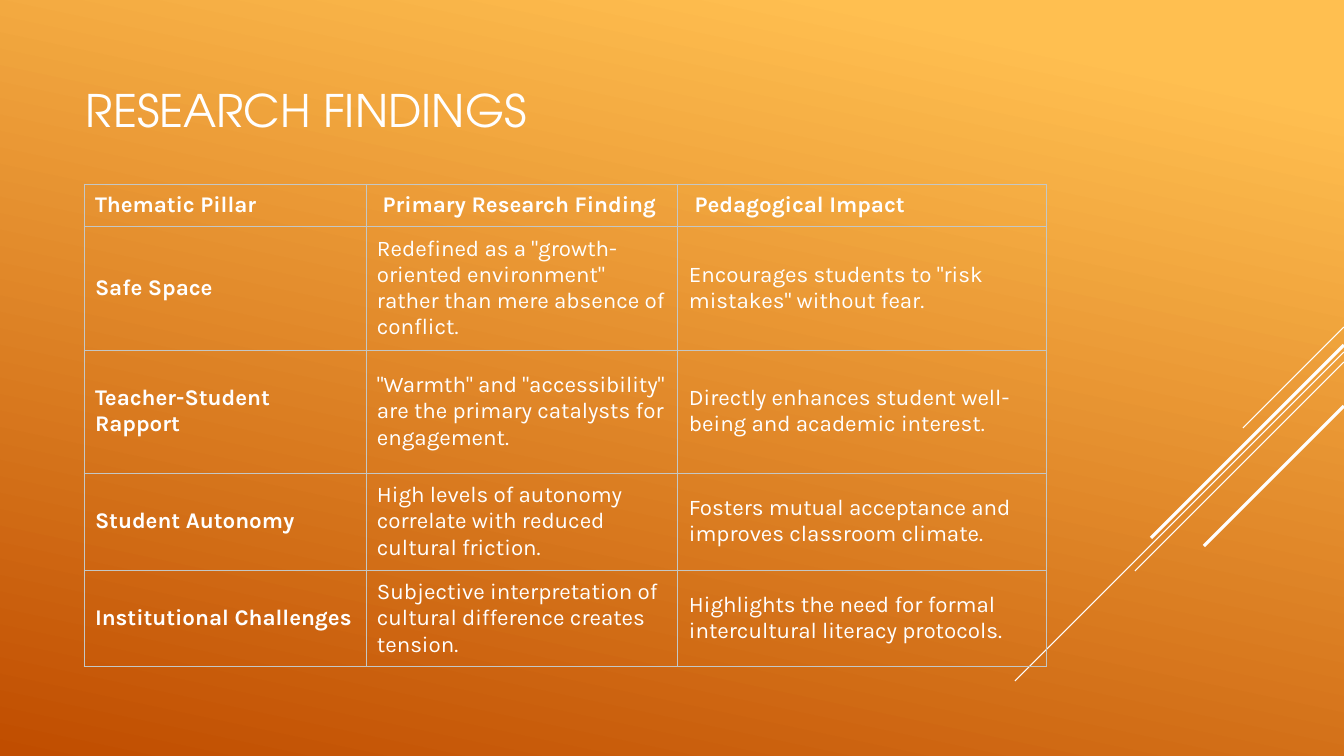
from dataclasses import dataclass

from lxml import etree
from pptx import Presentation
from pptx import util as u
from pptx.dml.color import RGBColor
from pptx.enum import shapes, text
from pptx.oxml import ns


@dataclass(frozen=True)
class Theme:
    ink: str = "FFFFFF"
    border: str = "C4C7C5"
    glow: str = "FFBF50"
    ember: str = "C04D00"
    heading_font: str = "TeX Gyre Adventor"
    body_font: str = "Karla"
    heading_size: int = 32
    body_size: int = 16
    hairline: float = 0.75
    bold_line: float = 2.25


THEME = Theme()
PX_PER_INCH = 100.8
SLIDE_WIDTH, SLIDE_HEIGHT = 1344, 756

STREAKS = [
    (327, 101, THEME.hairline),
    (352, 329, THEME.hairline),
    (362, 209, THEME.hairline),
    (345, 193, THEME.bold_line),
    (406, 140, THEME.bold_line),
]
COLUMN_WIDTHS = [282, 312, 369]
ROW_HEIGHTS = [42, 124, 123, 97, 97]
FINDINGS = [
    ("Thematic Pillar", " Primary Research Finding", " Pedagogical Impact"),
    ("Safe Space",
     'Redefined as a "growth-oriented environment" rather than mere absence of conflict.',
     'Encourages students to "risk mistakes" without fear.'),
    ("Teacher-Student Rapport",
     '"Warmth" and "accessibility" are the primary catalysts for engagement.',
     "Directly enhances student well-being and academic interest."),
    ("Student Autonomy",
     "High levels of autonomy correlate with reduced cultural friction.",
     "Fosters mutual acceptance and improves classroom climate."),
    ("Institutional Challenges",
     "Subjective interpretation of cultural difference creates tension.",
     "Highlights the need for formal intercultural literacy protocols."),
]


def px(length):
    return u.Inches(length / PX_PER_INCH)


def apply(target, values):
    for name, value in values.items():
        setattr(target, name, value)


def write(paragraph, words, font, size, bold=False):
    run = paragraph.add_run()
    run.text = words
    apply(run.font, {"name": font, "size": u.Pt(size), "bold": bold})
    run.font.color.rgb = RGBColor.from_string(THEME.ink)


def paint_background(slide):
    fill = slide.background.fill
    fill.gradient()
    fill.gradient_angle = 258
    for stop, color, position in zip(
        fill.gradient_stops, (THEME.glow, THEME.ember), (0.1, 1)
    ):
        stop.color.rgb = RGBColor.from_string(color)
        stop.position = position


def add_streak(slide, top, reach, weight):
    streak = slide.shapes.add_connector(
        shapes.MSO_CONNECTOR.STRAIGHT,
        px(SLIDE_WIDTH), px(top), px(SLIDE_WIDTH - reach), px(top + reach),
    )
    streak.line.color.rgb = RGBColor.from_string(THEME.ink)
    streak.line.width = u.Pt(weight)
    etree.SubElement(streak._element.spPr, ns.qn("a:effectLst"))


def add_heading(slide, words):
    heading = slide.shapes.add_textbox(px(76), px(20), px(1138), px(186))
    frame = heading.text_frame
    apply(frame, {"word_wrap": True, "vertical_anchor": text.MSO_ANCHOR.MIDDLE})
    frame.paragraphs[0].line_spacing = 0.9
    write(frame.paragraphs[0], words, THEME.heading_font, THEME.heading_size)


def outline(cell):
    properties = cell._tc.get_or_add_tcPr()
    for index, side in enumerate(("lnL", "lnR", "lnT", "lnB")):
        edge = etree.Element(ns.qn(f"a:{side}"), w=str(u.Pt(THEME.hairline)))
        solid = etree.SubElement(edge, ns.qn("a:solidFill"))
        etree.SubElement(solid, ns.qn("a:srgbClr"), val=THEME.border)
        properties.insert(index, edge)


def fill_cell(cell, words, bold):
    apply(cell, {
        "vertical_anchor": text.MSO_ANCHOR.MIDDLE,
        "margin_left": px(11), "margin_right": px(11),
        "margin_top": px(7), "margin_bottom": px(7),
    })
    cell.fill.background()
    outline(cell)
    write(cell.text_frame.paragraphs[0], words, THEME.body_font, THEME.body_size, bold)


def add_findings(slide):
    table = slide.shapes.add_table(
        len(ROW_HEIGHTS), len(COLUMN_WIDTHS),
        px(84), px(184), px(sum(COLUMN_WIDTHS)), px(sum(ROW_HEIGHTS)),
    ).table
    apply(table, {"first_row": False, "horz_banding": False})
    for column, width in zip(table.columns, COLUMN_WIDTHS):
        column.width = px(width)
    for row, height in zip(table.rows, ROW_HEIGHTS):
        row.height = px(height)
    for r, finding in enumerate(FINDINGS):
        for c, words in enumerate(finding):
            fill_cell(table.cell(r, c), words, bold=r == 0 or c == 0)


def main():
    deck = Presentation()
    apply(deck, {"slide_width": px(SLIDE_WIDTH), "slide_height": px(SLIDE_HEIGHT)})
    slide = deck.slides.add_slide(deck.slide_layouts[6])
    paint_background(slide)
    for streak in STREAKS:
        add_streak(slide, *streak)
    add_heading(slide, "RESEARCH FINDINGS")
    add_findings(slide)
    deck.save("out.pptx")


if __name__ == "__main__":
    main()
